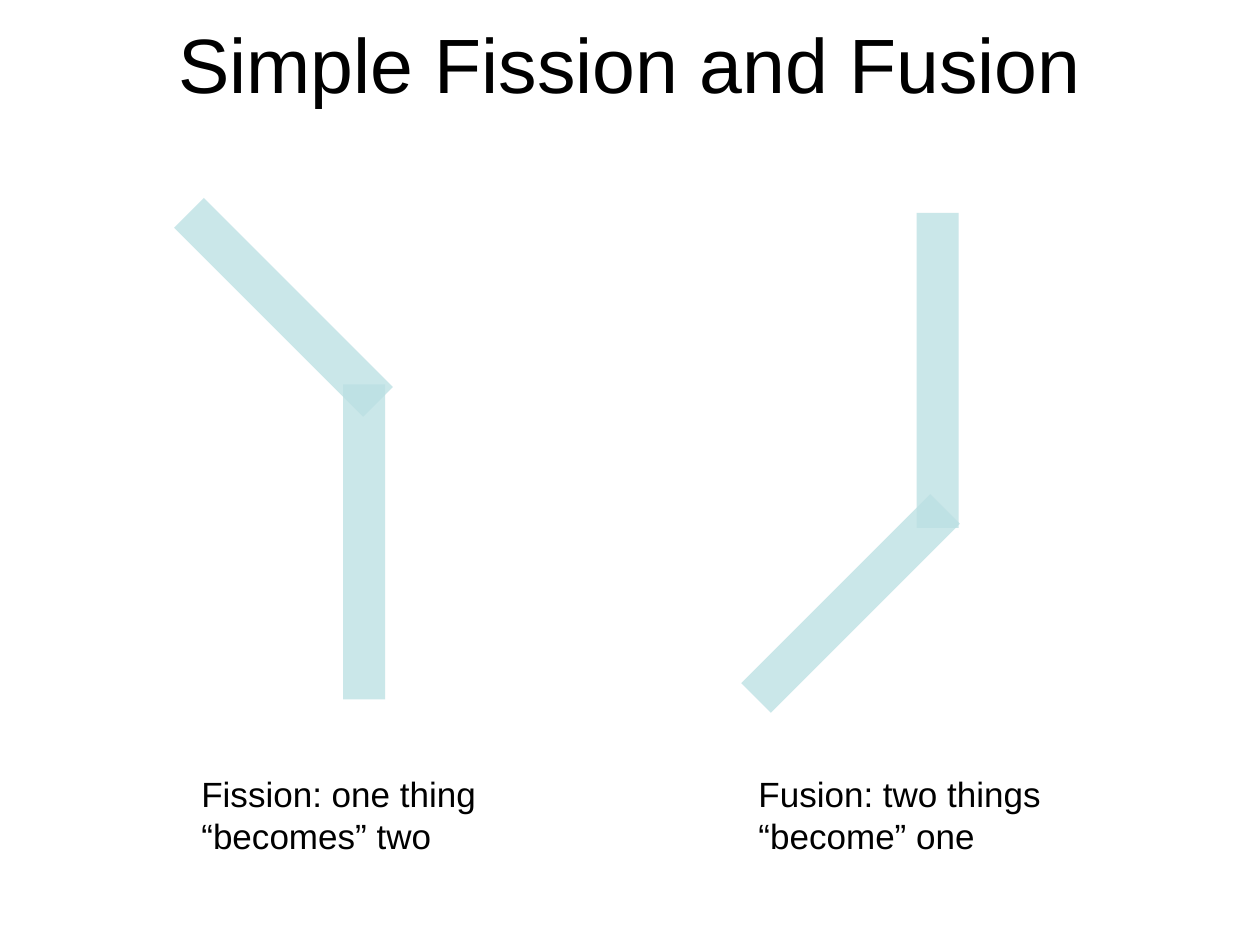
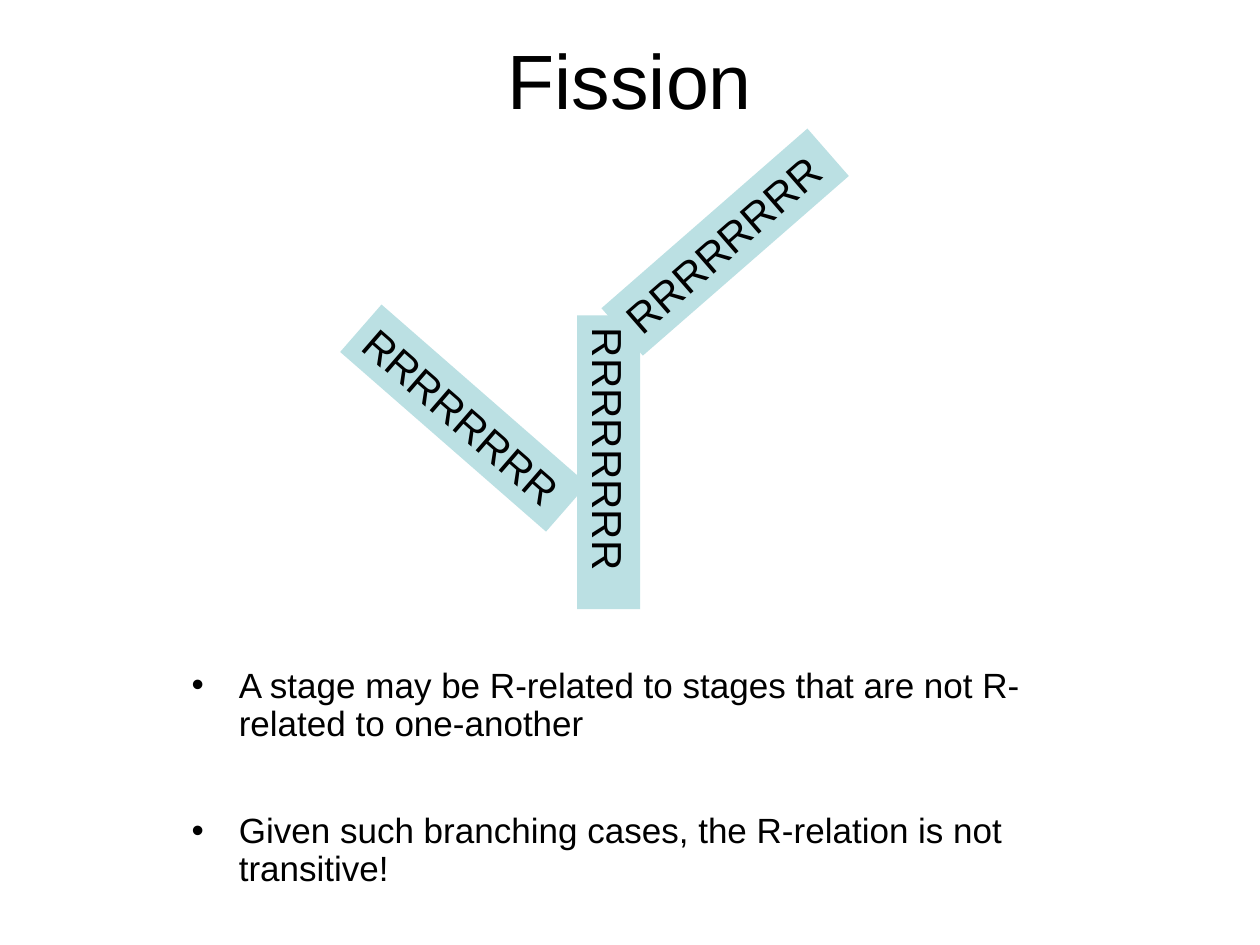
from dataclasses import dataclass

from lxml import etree
from pptx import Presentation
from pptx import util as u
from pptx.dml.color import RGBColor
from pptx.enum import shapes, text
from pptx.oxml.ns import qn

BLACK = RGBColor(0x00, 0x00, 0x00)
WHITE = RGBColor(0xFF, 0xFF, 0xFF)
PALE_TEAL = RGBColor(0xBB, 0xE0, 0xE3)
FONT = "Arial"
TITLE_ONLY, TITLE_AND_BODY = 5, 1
BAND_THICKNESS = 1.27
BODY_INDENT = 0.95


@dataclass(frozen=True)
class Branch:
    start: tuple[float, float]
    end: tuple[float, float]


@dataclass(frozen=True)
class Caption:
    left: float
    wording: str


@dataclass(frozen=True)
class StageBand:
    center: tuple[float, float]
    length: float
    rotation: float


BRANCHES = [
    Branch((7.34, 7.75), (7.34, 14.1)),
    Branch((7.62, 8.1), (3.81, 4.29)),
    Branch((18.9, 10.64), (18.9, 4.29)),
    Branch((19.05, 10.26), (15.24, 14.07)),
]
CAPTIONS = [
    Caption(3.81, "Fission: one thing “becomes” two"),
    Caption(15.04, "Fusion: two things “become” one"),
]
STAGE_BANDS = [
    StageBand((12.27, 9.32), 5.92, 90),
    StageBand((14.62, 4.88), 5.51, 318.9),
    StageBand((9.35, 8.43), 5.51, 41.1),
]
FISSION_POINTS = [
    "A stage may be R-related to stages that are not R-related to one-another",
    "Given such branching cases, the R-relation is not transitive!",
]


def add_run(paragraph, wording: str, size: float) -> None:
    run = paragraph.add_run()
    run.text = wording
    run.font.name = FONT
    run.font.size = u.Pt(size)
    run.font.color.rgb = BLACK


def place(shape, left: float, top: float, width: float, height: float) -> None:
    shape.left, shape.top = u.Cm(left), u.Cm(top)
    shape.width, shape.height = u.Cm(width), u.Cm(height)


def add_slide(presentation, layout: int, title: str, title_height: float):
    slide = presentation.slides.add_slide(presentation.slide_layouts[layout])
    slide.background.fill.solid()
    slide.background.fill.fore_color.rgb = WHITE
    shape = slide.shapes.title
    place(shape, 1.9, 0, 21.6, title_height)
    frame = shape.text_frame
    frame.auto_size = text.MSO_AUTO_SIZE.NONE
    frame.vertical_anchor = text.MSO_ANCHOR.MIDDLE
    paragraph = frame.paragraphs[0]
    paragraph.alignment = text.PP_ALIGN.CENTER
    add_run(paragraph, title, 44)
    return slide


def add_branch(slide, branch: Branch) -> None:
    connector = slide.shapes.add_connector(
        shapes.MSO_CONNECTOR.STRAIGHT,
        *(u.Cm(value) for value in branch.start + branch.end),
    )
    connector.line.width = u.Pt(24)
    connector.line.color.rgb = PALE_TEAL
    properties = connector._element.spPr
    color = properties.find(".//" + qn("a:srgbClr"))
    etree.SubElement(color, qn("a:alpha"), val="77000")
    etree.SubElement(properties, qn("a:effectLst"))


def add_caption(slide, caption: Caption) -> None:
    box = slide.shapes.add_textbox(
        u.Cm(caption.left), u.Cm(15.44), u.Cm(8.26), u.Cm(1.96)
    )
    box.text_frame.word_wrap = True
    add_run(box.text_frame.paragraphs[0], caption.wording, 20)


def add_stage_band(slide, band: StageBand) -> None:
    x, y = band.center
    shape = slide.shapes.add_shape(
        shapes.MSO_SHAPE.RECTANGLE,
        u.Cm(x - band.length / 2),
        u.Cm(y - BAND_THICKNESS / 2),
        u.Cm(band.length),
        u.Cm(BAND_THICKNESS),
    )
    shape.rotation = band.rotation
    shape.shadow.inherit = False
    shape.fill.solid()
    shape.fill.fore_color.rgb = PALE_TEAL
    shape.line.fill.background()
    frame = shape.text_frame
    frame.word_wrap = True
    frame.vertical_anchor = text.MSO_ANCHOR.TOP
    paragraph = frame.paragraphs[0]
    paragraph.alignment = text.PP_ALIGN.LEFT
    add_run(paragraph, "R" * 8, 24)


def fill_body(body, points: list[str]) -> None:
    place(body, 3.61, 13.34, 18.62, 4.45)
    frame = body.text_frame
    frame.auto_size = text.MSO_AUTO_SIZE.NONE
    for index, point in enumerate(points):
        paragraph = frame.add_paragraph() if index else frame.paragraphs[0]
        properties = paragraph._p.get_or_add_pPr()
        properties.set("marL", str(u.Cm(BODY_INDENT)))
        properties.set("indent", str(-u.Cm(BODY_INDENT)))
        etree.SubElement(properties, qn("a:buChar"), char="•")
        paragraph.line_spacing = 0.9
        paragraph.space_before = u.Pt(4 if index else 0)
        paragraph.space_after = u.Pt(36)
        add_run(paragraph, point, 20)


def build_fission_and_fusion(presentation) -> None:
    slide = add_slide(presentation, TITLE_ONLY, "Simple Fission and Fusion", 2.54)
    for branch in BRANCHES:
        add_branch(slide, branch)
    for caption in CAPTIONS:
        add_caption(slide, caption)


def build_fission(presentation) -> None:
    slide = add_slide(presentation, TITLE_AND_BODY, "Fission", 3.18)
    fill_body(slide.placeholders[1], FISSION_POINTS)
    for band in STAGE_BANDS:
        add_stage_band(slide, band)


def main() -> None:
    presentation = Presentation()
    presentation.slide_width = u.Cm(25.4)
    presentation.slide_height = u.Cm(19.05)
    build_fission_and_fusion(presentation)
    build_fission(presentation)
    presentation.save("out.pptx")


if __name__ == "__main__":
    main()
